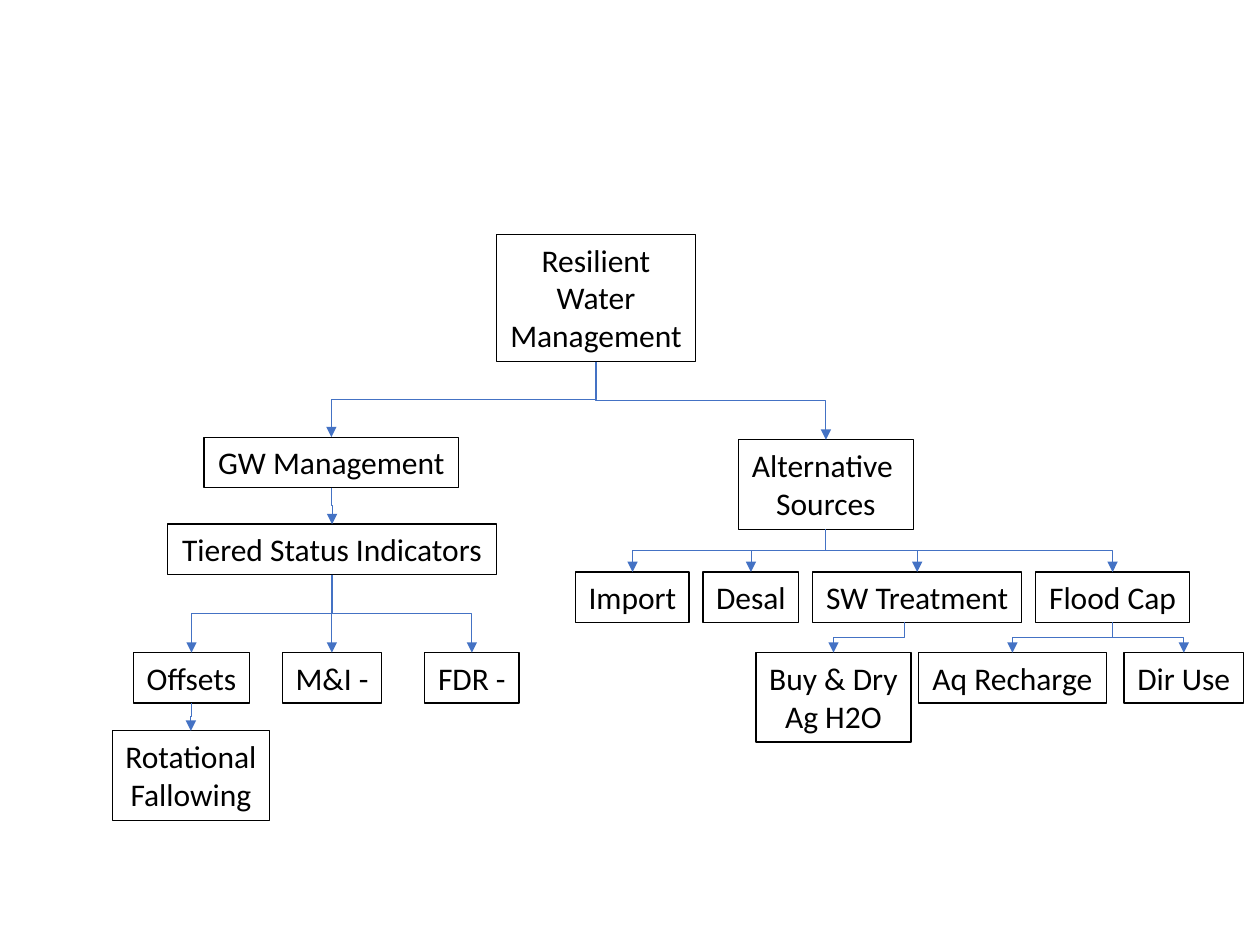
from lxml.etree import SubElement
from pptx import Presentation
from pptx.dml.color import RGBColor
from pptx.enum.shapes import MSO_CONNECTOR
from pptx.enum.text import MSO_AUTO_SIZE, PP_ALIGN
from pptx.oxml.ns import qn
from pptx.util import Inches, Pt

BOTTOM, TOP = 2, 0  # connection sites of a rectangle
LINE_HEIGHTS = {1: 0.4, 2: 0.71, 3: 1.01}

# name: (left, top, width, text)
BOXES = {
    "root": (3.94, 1.86, 1.58, "Resilient\nWater\nManagement"),
    "groundwater": (1.62, 3.47, 2.02, "GW Management"),
    "indicators": (1.33, 4.16, 2.61, "Tiered Status Indicators"),
    "offsets": (1.06, 5.18, 0.92, "Offsets"),
    "m&i": (2.24, 5.18, 0.79, "M&I -"),
    "fdr": (3.37, 5.18, 0.75, "FDR -"),
    "fallowing": (0.89, 5.8, 1.25, "Rotational\nFallowing"),
    "alternatives": (5.86, 3.49, 1.39, "Alternative \nSources"),
    "import": (4.57, 4.54, 0.9, "Import"),
    "desal": (5.58, 4.54, 0.76, "Desal"),
    "treatment": (6.45, 4.54, 1.66, "SW Treatment"),
    "flood": (8.22, 4.54, 1.22, "Flood Cap"),
    "buy & dry": (6, 5.18, 1.23, "Buy & Dry\nAg H2O"),
    "recharge": (7.29, 5.18, 1.49, "Aq Recharge"),
    "direct": (8.92, 5.18, 0.95, "Dir Use"),
}
CHILDREN = {
    "root": ["groundwater", "alternatives"],
    "groundwater": ["indicators"],
    "indicators": ["offsets", "m&i", "fdr"],
    "offsets": ["fallowing"],
    "alternatives": ["import", "desal", "treatment", "flood"],
    "treatment": ["buy & dry"],
    "flood": ["recharge", "direct"],
}
START_SHIFT = {"treatment": Inches(-0.1)}


def color(hex_string):
    return RGBColor.from_string(hex_string)


def write(tf, text, font="Calibri", size=18, fill="000000", align=PP_ALIGN.CENTER):
    for i, line in enumerate(text.split("\n")):
        p = tf.paragraphs[0] if i == 0 else tf.add_paragraph()
        p.alignment = align
        r = p.add_run()
        r.text = line
        r.font.name, r.font.size = font, Pt(size)
        r.font.color.rgb = color(fill)


class Chart:
    """Draws a tree of outlined boxes and elbow arrows on one slide."""

    border, arrow_color = "000000", "4472C4"

    def __init__(self, s):
        self.s = s

    def box(self, left, top, width, text):
        height = LINE_HEIGHTS[text.count("\n") + 1]
        sp = self.s.shapes.add_textbox(*map(Inches, (left, top, width, height)))
        sp.line.color.rgb = color(self.border)
        sp.line.width = Pt(0.75)
        tf = sp.text_frame
        tf.word_wrap = False
        tf.auto_size = MSO_AUTO_SIZE.SHAPE_TO_FIT_TEXT
        write(tf, text)
        return sp

    def arrow(self, parent, child, shift=0):
        """Elbow from parent's bottom to child's top; a shifted start is not glued."""
        x1 = parent.left + parent.width // 2 + shift
        y1 = parent.top + parent.height
        x2, y2 = child.left + child.width // 2, child.top
        c = self.s.shapes.add_connector(MSO_CONNECTOR.ELBOW, x1, y1, x2, y2)
        if not shift:
            c.begin_connect(parent, BOTTOM)
        c.end_connect(child, TOP)

        # Turn the elbow a quarter so that it leaves vertically.
        c.width, c.height = y2 - y1, abs(x2 - x1)
        c.left = (x1 + x2 - c.width) // 2
        c.top = (y1 + y2 - c.height) // 2
        xfrm = c._element.spPr.xfrm
        xfrm.flipH = x2 >= x1
        xfrm.rot = 270 if x2 >= x1 else 90

        c.line.color.rgb = color(self.arrow_color)
        c.line.width = Pt(0.5)
        SubElement(c.line._get_or_add_ln(), qn("a:tailEnd"), type="triangle")
        SubElement(c._element.spPr, qn("a:effectLst"))


def main():
    prs = Presentation()
    prs.slide_width, prs.slide_height = Inches(10), Inches(7.5)
    chart = Chart(prs.slides.add_slide(prs.slide_layouts[6]))
    boxes = {name: chart.box(*args) for name, args in BOXES.items()}
    for parent, children in CHILDREN.items():
        for child in children:
            chart.arrow(boxes[parent], boxes[child], START_SHIFT.get(parent, 0))
    prs.save("out.pptx")


if __name__ == "__main__":
    main()
